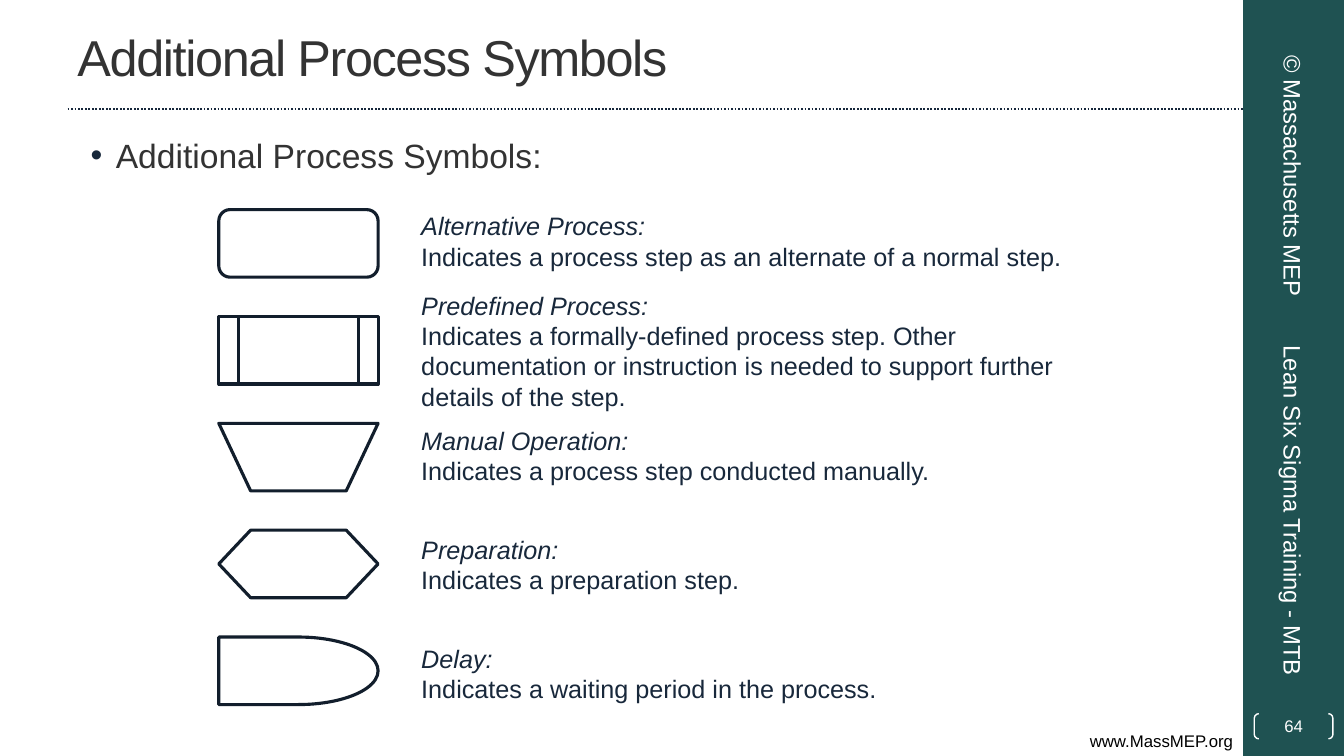
from pptx import Presentation
from pptx.dml.color import RGBColor
from pptx.enum.dml import MSO_LINE
from pptx.enum.shapes import MSO_CONNECTOR, MSO_SHAPE
from pptx.enum.text import MSO_ANCHOR, PP_ALIGN
from pptx.oxml.ns import qn
from pptx.util import Inches, Pt
from lxml import etree

LEFT, CENTER, RIGHT = PP_ALIGN.LEFT, PP_ALIGN.CENTER, PP_ALIGN.RIGHT
TOP, MIDDLE = MSO_ANCHOR.TOP, MSO_ANCHOR.MIDDLE
DOTS = MSO_LINE.ROUND_DOT
STRAIGHT = MSO_CONNECTOR.STRAIGHT
RECT, BRACKET = MSO_SHAPE.RECTANGLE, MSO_SHAPE.DOUBLE_BRACKET

TEAL, NAVY, INK, GRAY = "1F5252", "18283B", "121E2C", "333333"
WHITE, BLACK = "FFFFFF", "000000"

# Symbol, top of its text, text height, name, meaning
ROWS = [
    (MSO_SHAPE.FLOWCHART_ALTERNATE_PROCESS, 2.04, 0.71, "Alternative Process:",
     "Indicates a process step as an alternate of a normal step."),
    (MSO_SHAPE.FLOWCHART_PREDEFINED_PROCESS, 2.83, 1.31, "Predefined Process:",
     "Indicates a formally-defined process step. Other documentation or "
     "instruction is needed to support further details of the step."),
    (MSO_SHAPE.FLOWCHART_MANUAL_OPERATION, 4.17, 0.71, "Manual Operation:",
     "Indicates a process step conducted manually."),
    (MSO_SHAPE.FLOWCHART_PREPARATION, 5.25, 0.71, "Preparation:",
     "Indicates a preparation step."),
    (MSO_SHAPE.FLOWCHART_DELAY, 6.33, 0.71, "Delay:",
     "Indicates a waiting period in the process."),
]


def color(code):
    return RGBColor.from_string(code)


class Page:
    font = "Arial"

    def __init__(self, slide):
        self.slide = slide

    def fill_in(self, shape, lines, size, ink, align=LEFT):
        frame = shape.text_frame
        for i, line in enumerate(lines):
            para = frame.add_paragraph() if i else frame.paragraphs[0]
            para.alignment = align
            run = para.add_run()
            run.text = line
            form = {"name": self.font, "size": Pt(size)}
            if len(lines) > 1:
                form["italic"] = i == 0
            for key, value in form.items():
                setattr(run.font, key, value)
            run.font.color.rgb = color(ink)

    def text(self, at, lines, size, ink, align=LEFT, anchor=TOP, turn=0):
        box = self.slide.shapes.add_textbox(*map(Inches, at))
        box.rotation = turn
        form = {"word_wrap": True, "vertical_anchor": anchor}
        for key, value in form.items():
            setattr(box.text_frame, key, value)
        self.fill_in(box, lines, size, ink, align)
        return box

    def shape(self, kind, at, fill=None, line=None, width=1):
        item = self.slide.shapes.add_shape(kind, *map(Inches, at))
        item.shadow.inherit = False
        if fill:
            item.fill.solid()
            item.fill.fore_color.rgb = color(fill)
        else:
            item.fill.background()
        if line:
            item.line.color.rgb = color(line)
            item.line.width = Pt(width)
        else:
            item.line.fill.background()
        return item

    def rule(self, ends, ink, width):
        item = self.slide.shapes.add_connector(STRAIGHT, *map(Inches, ends))
        item.line.color.rgb = color(ink)
        item.line.width = Pt(width)
        item.line.dash_style = DOTS
        etree.SubElement(item._element.spPr, qn("a:effectLst"))

    def bullet(self, at, line, size, ink, dot):
        box = self.text(at, [line], size, ink)
        props = box.text_frame.paragraphs[0]._p.get_or_add_pPr()
        props.set("marL", str(Inches(0.38)))
        props.set("indent", str(Inches(-0.25)))
        tint = etree.SubElement(props, qn("a:buClr"))
        etree.SubElement(tint, qn("a:srgbClr"), val=dot)
        etree.SubElement(props, qn("a:buFont"), typeface=self.font)
        etree.SubElement(props, qn("a:buChar"), char="•")


def main():
    deck = Presentation()
    deck.slide_width, deck.slide_height = Inches(13.33), Inches(7.5)
    page = Page(deck.slides.add_slide(deck.slide_layouts[6]))

    # Side band, rule and web address
    page.shape(RECT, (12.33, 0, 1, 7.5), fill=TEAL)
    page.rule((0.67, 1.08, 12.33, 1.08), "17273B", 1.25)
    page.text((0, 7.2, 12.33, 0.3), ["www.MassMEP.org"], 12, BLACK, RIGHT)

    # Title and lead bullet
    title = page.text((0.67, 0.03, 11.11, 1.05),
                      ["Additional Process Symbols"], 36, GRAY, anchor=MIDDLE)
    run = title.text_frame.paragraphs[0].runs[0]
    run._r.get_or_add_rPr().set("spc", "-100")
    page.bullet((0.67, 1.29, 11.11, 0.6), "Additional Process Symbols:",
                24, GRAY, NAVY)

    # Page number in brackets
    mark = page.shape(BRACKET, (12.44, 7.08, 0.78, 0.25), line=WHITE)
    mark.adjustments[0] = 0.18
    form = {"vertical_anchor": MIDDLE, "margin_left": 0, "margin_right": 0,
            "margin_top": 0, "margin_bottom": 0}
    for key, value in form.items():
        setattr(mark.text_frame, key, value)
    page.fill_in(mark, ["64"], 12, WHITE, CENTER)

    # Turned text on the band
    page.text((11.24, 1.48, 3.17, 0.53), ["© Massachusetts MEP"],
              17, WHITE, CENTER, MIDDLE, 90)
    page.text((10.99, 4.9, 3.67, 0.53), ["Lean Six Sigma Training - MTB"],
              17, WHITE, LEFT, MIDDLE, 90)

    # Symbols at an even step, each with its meaning
    for i, (kind, top, height, name, note) in enumerate(ROWS):
        page.shape(kind, (2.17, 2.08 + i * 1.06, 1.58, 0.67),
                   line=INK, width=2.25)
        page.text((4.08, top, 6.67, height), [name, note], 18, NAVY)

    deck.save("out.pptx")


if __name__ == "__main__":
    main()
